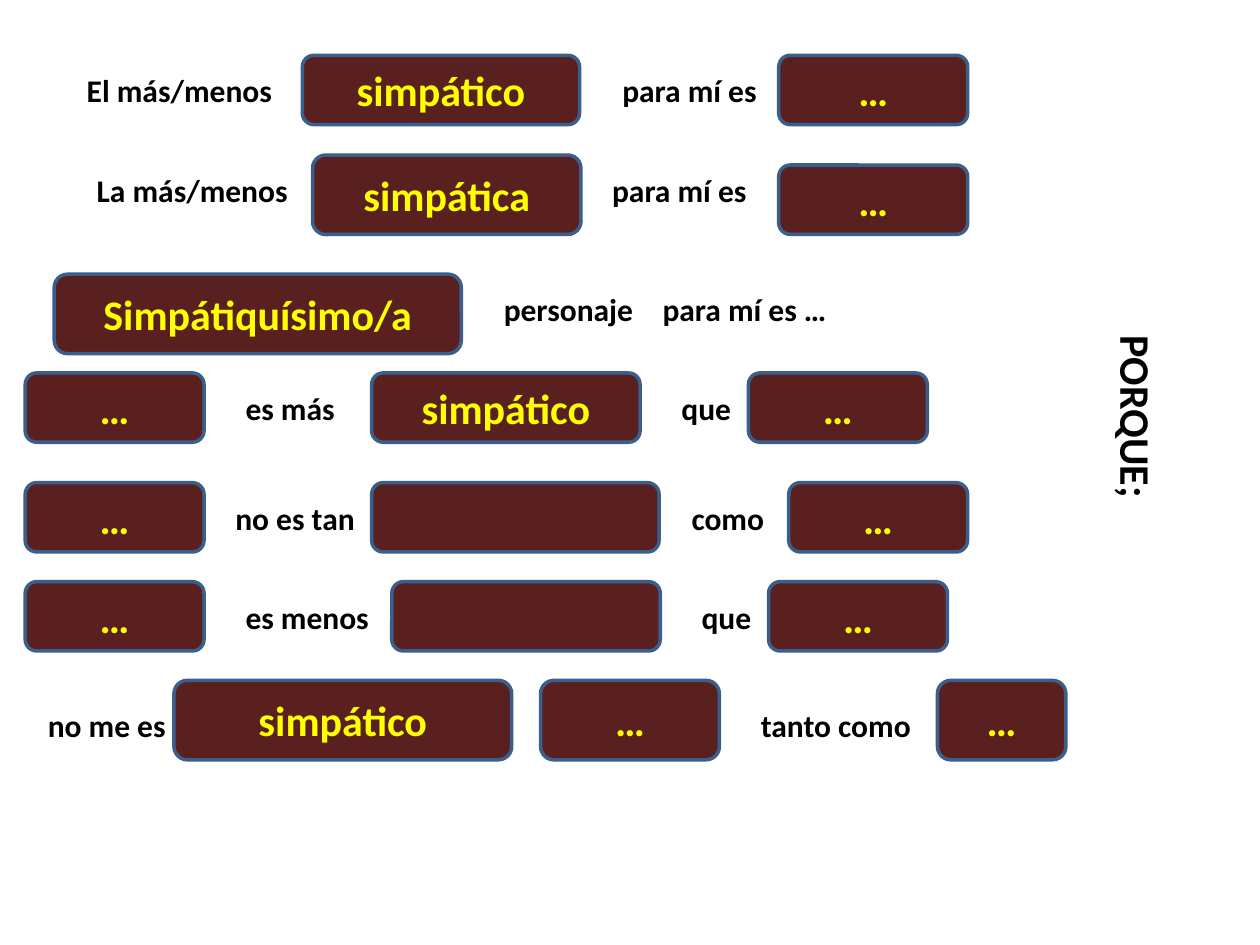
from dataclasses import dataclass

from pptx import Presentation
from pptx.dml.color import RGBColor
from pptx.enum.shapes import MSO_SHAPE
from pptx.enum.text import MSO_ANCHOR, MSO_AUTO_SIZE, PP_ALIGN
from pptx.shapes.autoshape import Shape
from pptx.slide import Slide
from pptx.util import Pt


@dataclass(frozen=True)
class Theme:
    font: str = "Calibri"
    fill: RGBColor = RGBColor(0x5A, 0x20, 0x20)
    edge: RGBColor = RGBColor(0x3A, 0x5F, 0x8C)
    gold: RGBColor = RGBColor(0xFF, 0xFF, 0x00)
    ink: RGBColor = RGBColor(0, 0, 0)
    small: int = 18
    large: int = 24
    line: int = 2


@dataclass(frozen=True)
class Part:
    left: float
    width: float
    text: str = ""


@dataclass(frozen=True)
class Row:
    top: float
    high: float
    boxes: list[Part]
    labels: list[Part]
    drop: float = 5.7  # labels start this far below the box tops


THEME = Theme()
LOW, TALL = 39.6, 45.4
ROWS = [
    Row(31.6, LOW,
        [Part(172.8, 158.4, "simpático"), Part(445, 108, "…")],
        [Part(42.5, 124.6, "El más/menos"), Part(348.5, 130.3, "para mí es")]),
    Row(88.6, TALL,
        [Part(178.6, 153.4, "simpática")],
        [Part(48.2, 124.6, "La más/menos"), Part(342.7, 130.3, "para mí es")]),
    Row(94.3, LOW, [Part(445, 108, "…")], []),
    Row(156.7, TALL,
        [Part(31, 232.6, "Simpátiquísimo/a")],
        [Part(280.8, 118.8, "personaje"), Part(371.5, 215.3, "para mí es …")]),
    Row(213.1, LOW,
        [Part(14.4, 102.2, "…"), Part(212.4, 153.4, "simpático"),
         Part(427.7, 102.2, "…")],
        [Part(133.2, 73.4, "es más"), Part(382.3, 73.4, "que")]),
    Row(275.8, LOW,
        [Part(14.4, 102.2, "…"), Part(212.4, 164.2), Part(450.7, 102.2, "…")],
        [Part(127.4, 102.2, "no es tan"), Part(388.1, 73.4, "como")]),
    Row(332.4, LOW,
        [Part(14.4, 102.2, "…"), Part(223.9, 153.4), Part(439.2, 102.2, "…")],
        [Part(133.2, 102.2, "es menos"), Part(393.8, 73.4, "que")]),
    Row(388.8, TALL,
        [Part(99.4, 193, "simpático"), Part(308.9, 102.2, "…"),
         Part(535.7, 73.4, "…")],
        [Part(20.2, 102.2, "no me es"), Part(427.7, 102.2, "tanto como")],
        drop=11.4),
]


def write(shape: Shape, text: str, size: int, color: RGBColor) -> None:
    shape.text_frame.word_wrap = True
    para = shape.text_frame.paragraphs[0]
    para.text = text
    font = para.font
    font.name, font.size, font.bold = THEME.font, Pt(size), True
    font.color.rgb = color


def box(slide: Slide, part: Part, top: float, high: float) -> None:
    shape = slide.shapes.add_shape(
        MSO_SHAPE.ROUNDED_RECTANGLE,
        Pt(part.left), Pt(top), Pt(part.width), Pt(high))
    shape.shadow.inherit = False
    shape.fill.solid()
    shape.fill.fore_color.rgb = THEME.fill
    shape.line.color.rgb = THEME.edge
    shape.line.width = Pt(THEME.line)
    write(shape, part.text, THEME.large, THEME.gold)
    shape.text_frame.vertical_anchor = MSO_ANCHOR.MIDDLE
    shape.text_frame.paragraphs[0].alignment = PP_ALIGN.CENTER


def label(slide: Slide, part: Part, top: float, size: int) -> Shape:
    shape = slide.shapes.add_textbox(
        Pt(part.left), Pt(top), Pt(part.width), Pt(size * 1.2 + 7.2))
    write(shape, part.text, size, THEME.ink)
    shape.text_frame.auto_size = MSO_AUTO_SIZE.SHAPE_TO_FIT_TEXT
    return shape


def main() -> None:
    deck = Presentation()
    deck.slide_width, deck.slide_height = Pt(720), Pt(540)
    slide = deck.slides.add_slide(deck.slide_layouts[6])

    # Sentence frames
    for row in ROWS:
        for part in row.labels:
            label(slide, part, row.top + row.drop, THEME.small)
        for part in row.boxes:
            box(slide, part, row.top, row.high)

    # Upright prompt on the right
    prompt = label(slide, Part(593.3, 113, "PORQUE;"), 223.2, THEME.large)
    prompt.rotation = 90

    deck.save("out.pptx")


if __name__ == "__main__":
    main()
